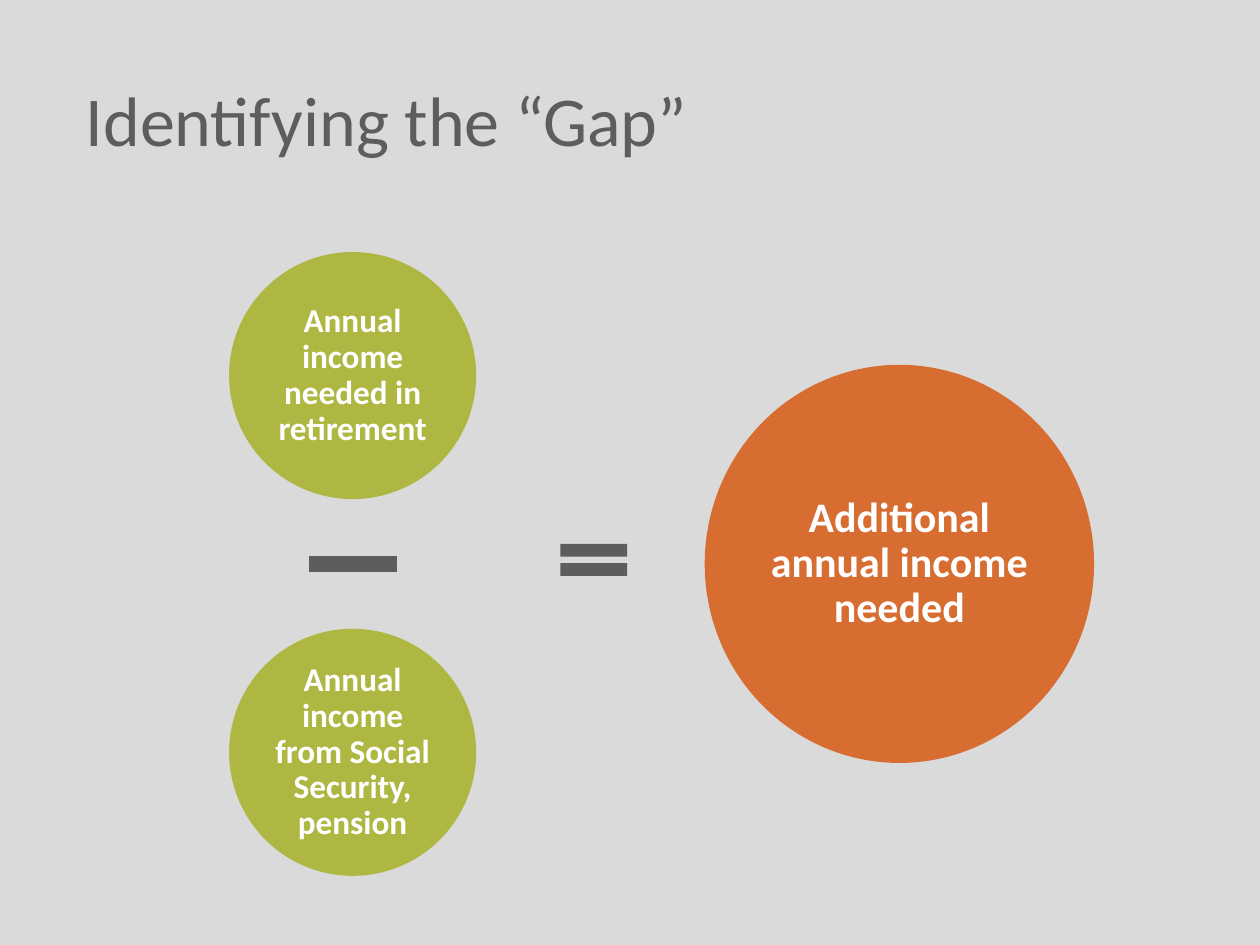
from pptx import Presentation
from pptx.dml.color import RGBColor
from pptx.enum import shapes, text
from pptx.util import Pt

FONT = "Calibri"
GRAY, GREEN, ORANGE, WHITE = "5D5D5D", "AFB743", "D76D31", "FFFFFF"
BACKGROUND = "DADADA"

# Content: text, fill, font size, centre x, centre y, width, height
TITLE = "Identifying the “Gap”"
LEFT_X, MIDDLE_Y, ROW_OFFSET = 201.5, 322.25, 107.65
CIRCLES = [
    ("Annual income needed in retirement", GREEN, 19,
     LEFT_X, MIDDLE_Y - ROW_OFFSET, 141.2, 141.2),
    ("Annual income from Social Security, pension", GREEN, 19,
     LEFT_X, MIDDLE_Y + ROW_OFFSET, 141.2, 141.2),
    ("Additional annual income needed", ORANGE, 24,
     513.95, MIDDLE_Y, 222.5, 227.5),
]
# Operators: shape, centre x, centre y, width, height
OPERATORS = [
    (shapes.MSO_SHAPE.MATH_MINUS, LEFT_X, MIDDLE_Y, 68.5, 38),
    (shapes.MSO_SHAPE.MATH_EQUAL, 339.3, 320, 52, 31),
]


def color(value):
    return RGBColor.from_string(value)


def write(shape, words, size, fill, bold=False, align=text.PP_ALIGN.LEFT,
          spacing=1.0, margin=None):
    frame = shape.text_frame
    frame.word_wrap = True
    frame.vertical_anchor = text.MSO_ANCHOR.MIDDLE
    if margin is not None:
        frame.margin_left = frame.margin_right = Pt(margin)
        frame.margin_top = frame.margin_bottom = Pt(margin)
    paragraph = frame.paragraphs[0]
    paragraph.text = words
    paragraph.alignment = align
    paragraph.line_spacing = spacing
    font = paragraph.font
    font.name, font.size, font.bold = FONT, Pt(size), bold
    font.color.rgb = color(fill)


def add_centered(slide, kind, fill, x, y, width, height):
    shape = slide.shapes.add_shape(
        kind, Pt(x - width / 2), Pt(y - height / 2), Pt(width), Pt(height))
    shape.shadow.inherit = False
    shape.fill.solid()
    shape.fill.fore_color.rgb = color(fill)
    shape.line.fill.background()
    return shape


def main():
    presentation = Presentation()
    presentation.slide_width, presentation.slide_height = Pt(720), Pt(540)
    slide = presentation.slides.add_slide(presentation.slide_layouts[6])
    slide.background.fill.solid()
    slide.background.fill.fore_color.rgb = color(BACKGROUND)

    # Title
    title = slide.shapes.add_textbox(Pt(42), Pt(42), Pt(495), Pt(52))
    write(title, TITLE, 40, GRAY)

    # Circles of the equation
    for words, fill, size, *place in CIRCLES:
        circle = add_centered(slide, shapes.MSO_SHAPE.OVAL, fill, *place)
        write(circle, words, size, WHITE, bold=True,
              align=text.PP_ALIGN.CENTER, spacing=0.9, margin=2)

    # Minus and equals signs
    for kind, *place in OPERATORS:
        add_centered(slide, kind, GRAY, *place)

    presentation.save("out.pptx")


if __name__ == "__main__":
    main()
